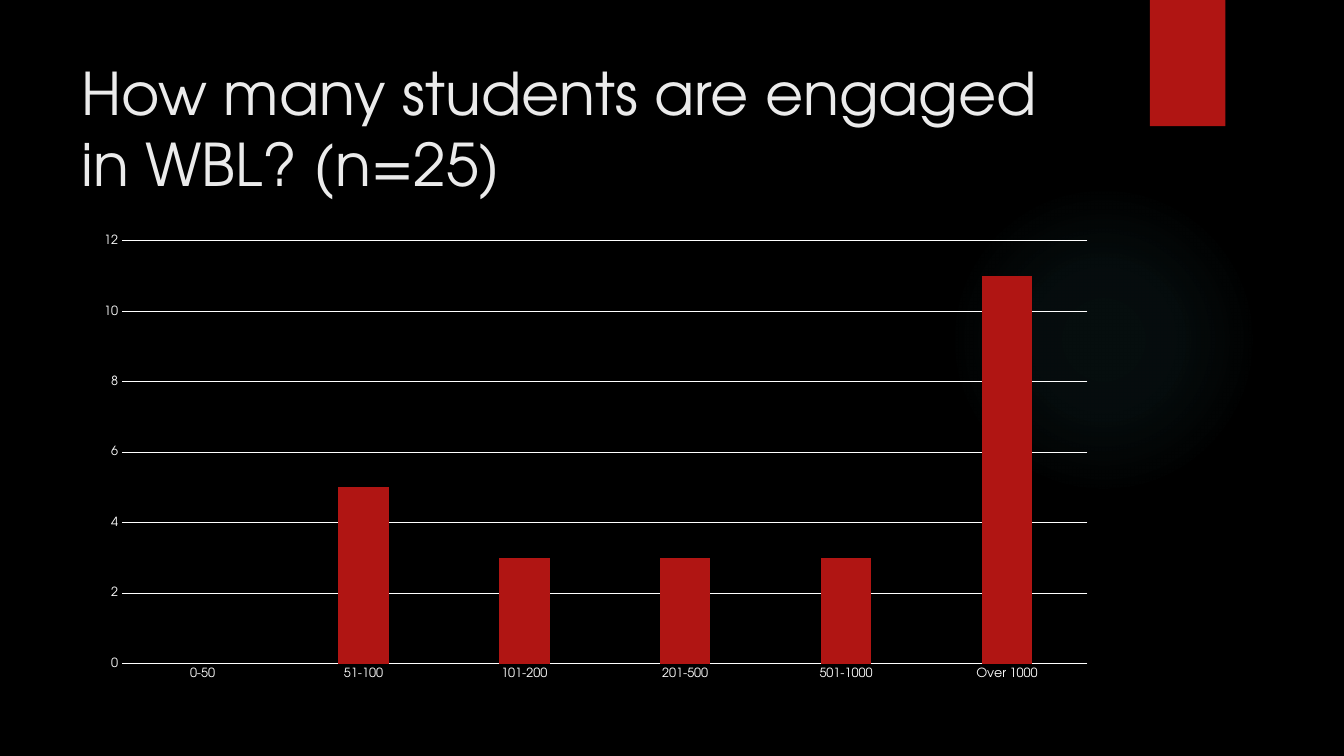
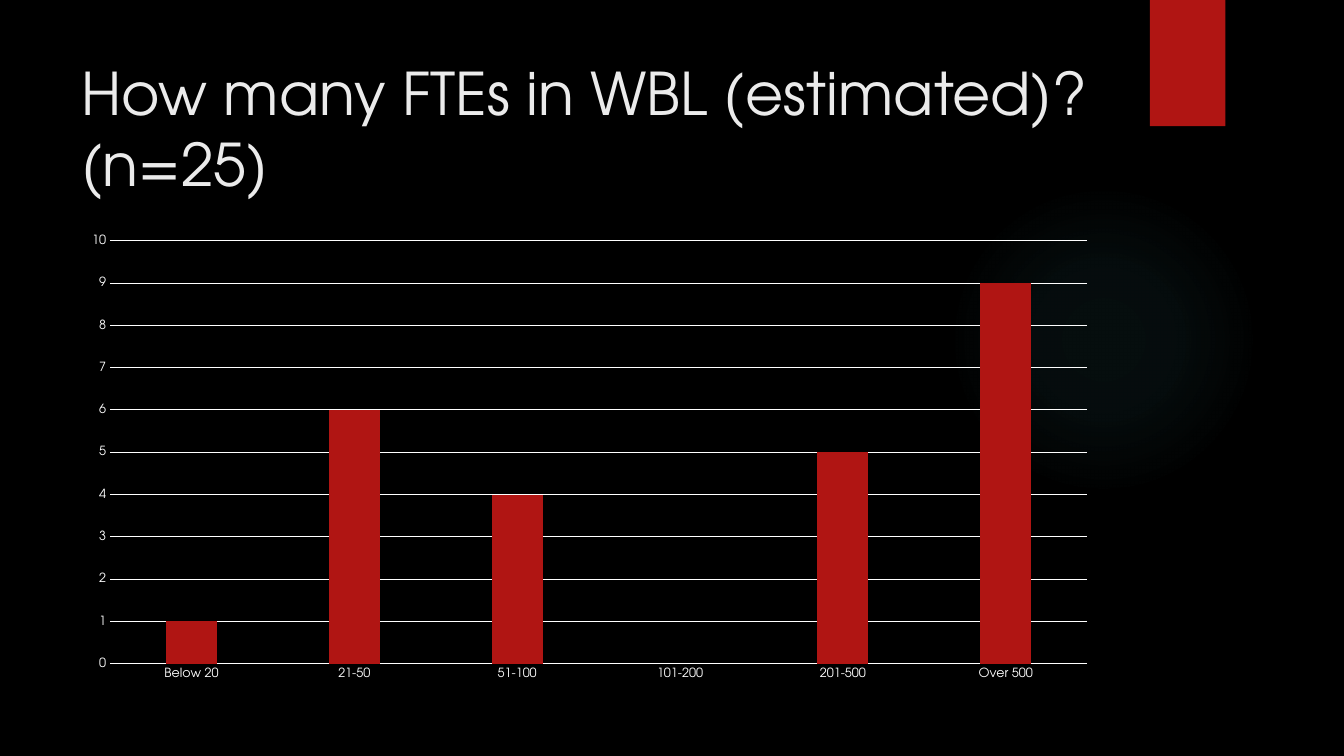
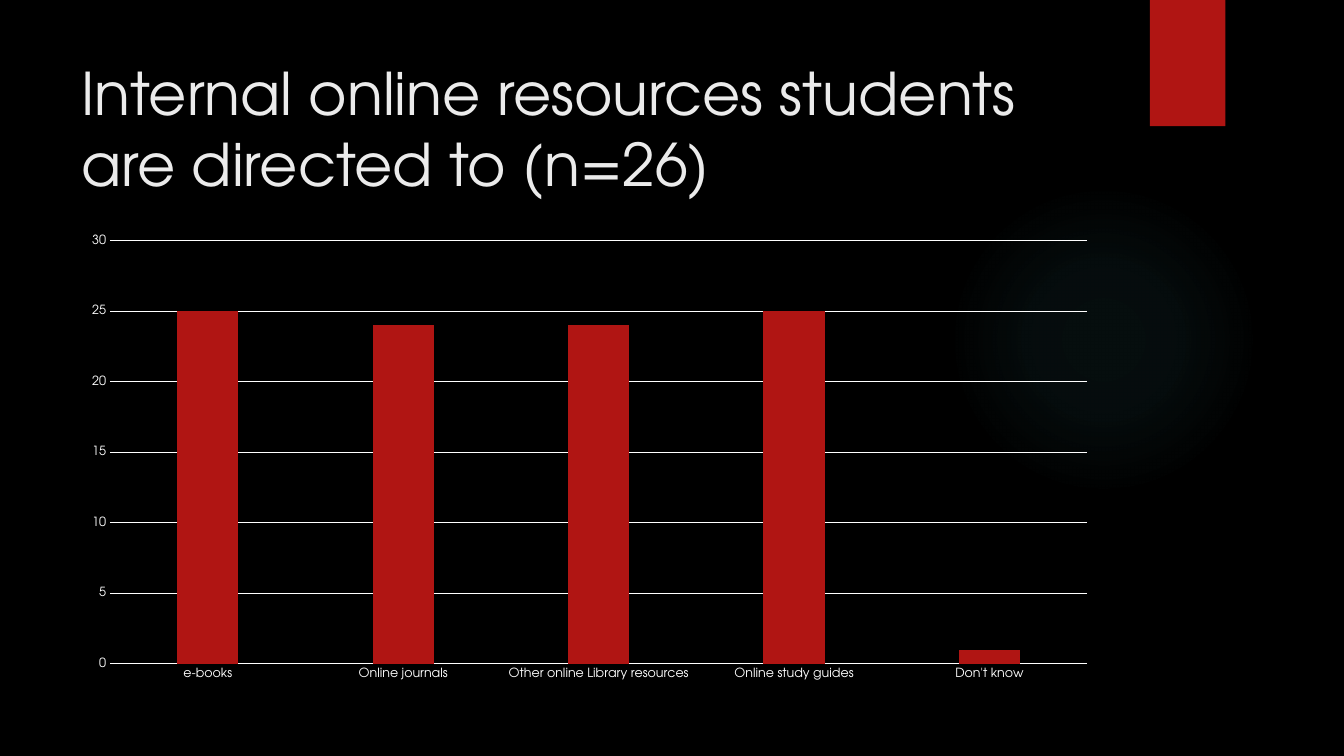
from dataclasses import dataclass

from lxml.etree import SubElement
from pptx import Presentation
from pptx.chart.data import CategoryChartData
from pptx.dml.color import RGBColor
from pptx.enum.chart import XL_CHART_TYPE, XL_TICK_MARK
from pptx.enum.shapes import MSO_SHAPE
from pptx.enum.text import MSO_ANCHOR
from pptx.oxml.ns import qn
from pptx.slide import Slide
from pptx.util import Cm, Pt

FONT = "TeX Gyre Adventor"
BLACK, RED, TEAL = "000000", "B01513", "50B9C1"
WHITE, TITLE_COLOR = "FFFFFF", "EBEBEB"
GLOW_STOPS = [(0, 7), (36, 6), (69, 0)]  # position %, opacity %
LEFT, RIGHT = 1.8, 27.92


@dataclass
class ChartSlide:
    title: str
    values: dict[str, int | None]
    left: float = LEFT


SLIDES = [
    ChartSlide(
        "How many students are engaged in WBL? (n=25)",
        {"0-50": None, "51-100": 5, "101-200": 3, "201-500": 3,
         "501-1000": 3, "Over 1000": 11},
        left=2.11,
    ),
    ChartSlide(
        "How many FTEs in WBL (estimated)?\n(n=25)",
        {"Below 20": 1, "21-50": 6, "51-100": 4, "101-200": None,
         "201-500": 5, "Over 500": 9},
    ),
    ChartSlide(
        "Internal online resources students are directed to (n=26)",
        {"e-books": 25, "Online journals": 24,
         "Other online Library resources": 24,
         "Online study guides": 25, "Don't know": 1},
    ),
]


def rgb(color: str) -> RGBColor:
    return RGBColor.from_string(color)


def set_font(font, *, size: float, color: str) -> None:
    font.name = FONT
    font.size = Pt(size)
    font.color.rgb = rgb(color)


def set_line(line, color: str) -> None:
    line.color.rgb = rgb(color)
    line.width = Pt(0.75)


def add_plain_shape(s: Slide, kind: MSO_SHAPE, left: float, top: float,
                    width: float, height: float):
    """Add a shape without line or shadow; lengths in centimetres."""
    sp = s.shapes.add_shape(kind, Cm(left), Cm(top), Cm(width), Cm(height))
    sp.shadow.inherit = False
    sp.line.fill.background()
    return sp


def add_glow(s: Slide) -> None:
    """Add the faint circle that fades out from its centre."""
    sp = add_plain_shape(s, MSO_SHAPE.OVAL, 23.9, 4.65, 7.82, 7.82)
    sp.fill.gradient()
    grad = sp.fill._xPr.find(qn("a:gradFill"))
    for child in list(grad):
        grad.remove(child)
    stops = SubElement(grad, qn("a:gsLst"))
    for position, opacity in GLOW_STOPS:
        stop = SubElement(stops, qn("a:gs"), pos=str(position * 1000))
        color = SubElement(stop, qn("a:srgbClr"), val=TEAL)
        SubElement(color, qn("a:alpha"), val=str(opacity * 1000))
    circle = SubElement(grad, qn("a:path"), path="circle")
    SubElement(circle, qn("a:fillToRect"),
               dict.fromkeys("ltrb", "50000"))


def add_backdrop(s: Slide) -> None:
    s.background.fill.solid()
    s.background.fill.fore_color.rgb = rgb(BLACK)
    add_glow(s)
    tab = add_plain_shape(s, MSO_SHAPE.RECTANGLE, 28.98, 0, 1.9, 3.18)
    tab.fill.solid()
    tab.fill.fore_color.rgb = rgb(RED)


def add_text(s: Slide, text: str, left: float, top: float, width: float,
             height: float, *, size: float, color: str,
             anchor: MSO_ANCHOR = MSO_ANCHOR.MIDDLE) -> None:
    tf = s.shapes.add_textbox(Cm(left), Cm(top), Cm(width), Cm(height)).text_frame
    tf.word_wrap = True
    tf.vertical_anchor = anchor
    p = tf.paragraphs[0]
    p.text = text
    for r in p.runs:
        set_font(r.font, size=size, color=color)


def add_columns(s: Slide, values: dict[str, int | None], left: float) -> None:
    data = CategoryChartData()
    data.categories = list(values)
    data.add_series("Series 1", list(values.values()))
    chart = s.shapes.add_chart(
        XL_CHART_TYPE.COLUMN_CLUSTERED,
        Cm(left), Cm(5.69), Cm(RIGHT - left), Cm(11.66), data).chart
    chart.has_title = False
    chart.has_legend = False
    set_font(chart.font, size=10, color=WHITE)

    plot = chart.plots[0]
    plot.vary_by_categories = False
    plot.gap_width = 219
    plot.overlap = -27
    fill = plot.series[0].format.fill
    fill.solid()
    fill.fore_color.rgb = rgb(RED)

    for axis in (chart.category_axis, chart.value_axis):
        axis.major_tick_mark = axis.minor_tick_mark = XL_TICK_MARK.NONE
        set_font(axis.tick_labels.font, size=9, color=WHITE)
    set_line(chart.category_axis.format.line, WHITE)
    chart.value_axis.format.line.fill.background()
    set_line(chart.value_axis.major_gridlines.format.line, WHITE)


def main() -> None:
    prs = Presentation()
    prs.slide_width, prs.slide_height = Cm(33.87), Cm(19.05)
    for content in SLIDES:
        s = prs.slides.add_slide(prs.slide_layouts[6])
        add_backdrop(s)
        add_text(s, content.title, LEFT, 1.27, 26.14, 3.89,
                 size=42, color=TITLE_COLOR)
        add_columns(s, content.values, content.left)
    prs.save("out.pptx")


if __name__ == "__main__":
    main()
